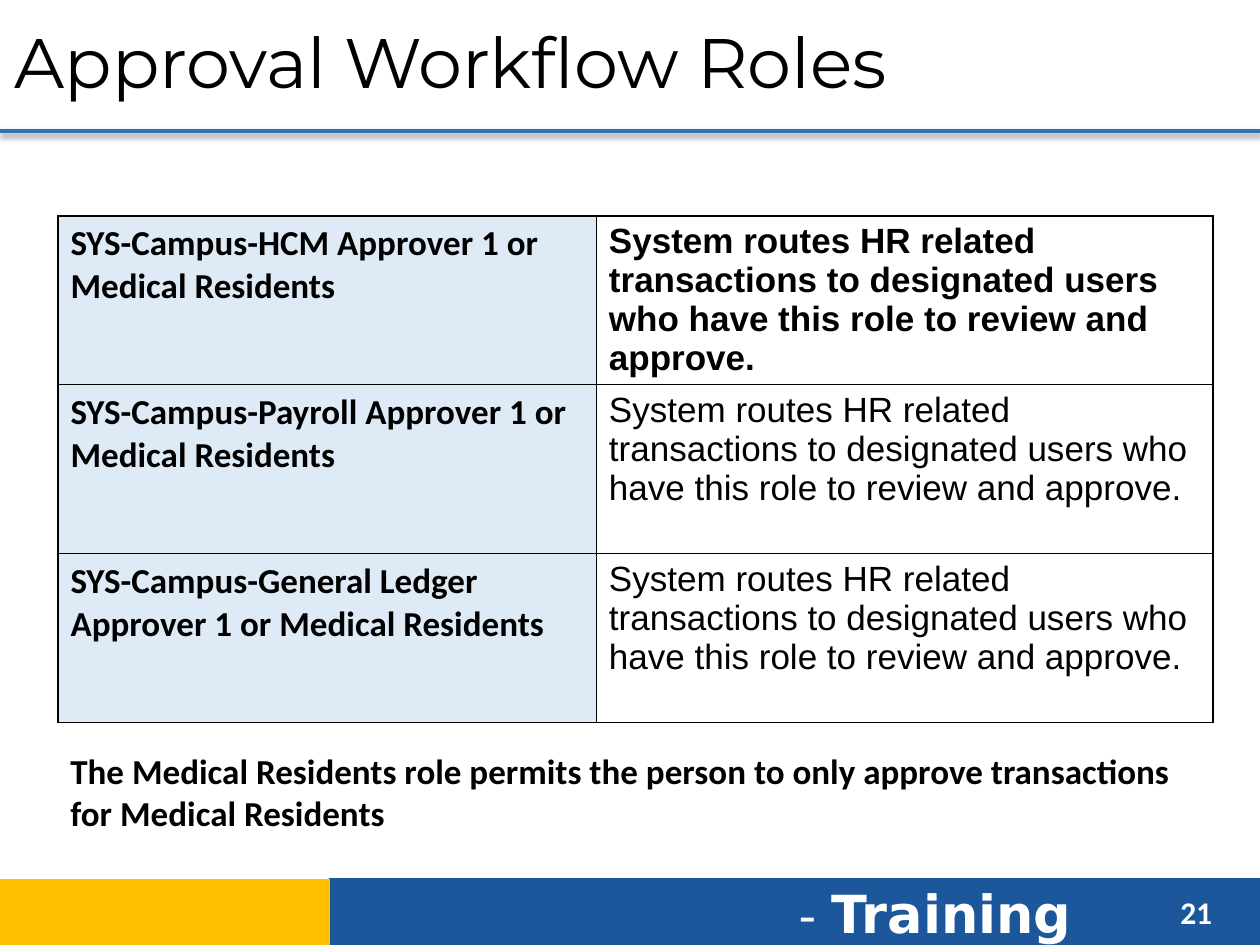
from dataclasses import dataclass

from lxml.etree import SubElement
from pptx import Presentation
from pptx.dml.color import RGBColor
from pptx.enum.shapes import MSO_CONNECTOR, MSO_SHAPE
from pptx.enum.text import MSO_ANCHOR
from pptx.oxml.ns import qn
from pptx.slide import Slide
from pptx.table import _Cell
from pptx.text.text import TextFrame
from pptx.util import Pt

COLORS = {
    "black": "000000",
    "white": "FFFFFF",
    "navy": "1D579B",
    "gold": "FFC000",
    "rule": "2E75B5",
    "role": "DEEBF7",
}


@dataclass(frozen=True)
class Box:
    left: float
    top: float
    width: float
    height: float

    def lengths(self) -> tuple[Pt, ...]:
        return tuple(Pt(v) for v in (self.left, self.top, self.width, self.height))


@dataclass(frozen=True)
class Words:
    text: str
    size: float = 20
    font: str = "Calibri"
    bold: bool = True
    color: str = "black"


@dataclass(frozen=True)
class Label:
    box: Box
    runs: tuple[Words, ...]
    anchor: MSO_ANCHOR = MSO_ANCHOR.TOP


@dataclass(frozen=True)
class Role:
    name: str
    bold_duty: bool = False


BANDS = (
    (Box(188, 501.8, 532, 39.6), "navy"),
    (Box(-0.7, 502.4, 189.3, 39.6), "gold"),
)
LABELS = (
    Label(Box(449.3, 499.7, 201.6, 43.9),
          (Words("- ", 28, "DejaVu Sans", False, "white"),
           Words("Training", 30, "DejaVu Sans", True, "white"))),
    Label(Box(667.4, 506.9, 43.2, 28.8), (Words("21", 18, color="white"),)),
    Label(Box(1.4, 10.1, 640, 49),
          (Words("Approval Workflow Roles", 40, "Montserrat", False),), MSO_ANCHOR.MIDDLE),
    Label(Box(33.1, 424.8, 653.8, 79.9),
          (Words("The Medical Residents role permits the person to only approve "
                 "transactions for Medical Residents"),)),
)
DUTY = ("System routes HR related transactions to designated users "
        "who have this role to review and approve.")
ROLES = (
    Role("SYS-Campus-HCM Approver 1 or Medical Residents", True),
    Role("SYS-Campus-Payroll Approver 1 or Medical Residents"),
    Role("SYS-Campus-General Ledger Approver 1 or Medical Residents"),
)
COLUMN_WIDTHS = (307.7, 352.5)
ROW_HEIGHT = 96.5


def rgb(name: str) -> RGBColor:
    return RGBColor.from_string(COLORS[name])


def write(frame: TextFrame, runs: tuple[Words, ...]) -> None:
    for words in runs:
        run = frame.paragraphs[0].add_run()
        run.text = words.text
        run.font.size = Pt(words.size)
        run.font.name = words.font
        run.font.bold = words.bold
        run.font.color.rgb = rgb(words.color)


def add_label(slide: Slide, label: Label) -> None:
    frame = slide.shapes.add_textbox(*label.box.lengths()).text_frame
    frame.word_wrap = True
    frame.vertical_anchor = label.anchor
    write(frame, label.runs)


def add_band(slide: Slide, box: Box, color: str) -> None:
    band = slide.shapes.add_shape(MSO_SHAPE.RECTANGLE, *box.lengths())
    band.shadow.inherit = False
    band.fill.solid()
    band.fill.fore_color.rgb = rgb(color)
    band.line.fill.background()


def add_title_rule(slide: Slide) -> None:
    rule = slide.shapes.add_connector(MSO_CONNECTOR.STRAIGHT, Pt(0), Pt(74.9), Pt(720), Pt(74.9))
    rule.line.color.rgb = rgb("rule")
    rule.line.width = Pt(2.25)
    effects = SubElement(rule._element.spPr, qn("a:effectLst"))
    shadow = SubElement(effects, qn("a:outerShdw"), blurRad=str(Pt(3.1)), dist=str(Pt(1.6)),
                        dir="5400000", rotWithShape="0")
    tint = SubElement(shadow, qn("a:srgbClr"), val=COLORS["black"])
    SubElement(tint, qn("a:alpha"), val="38000")


def fill_cell(cell: _Cell, words: Words, background: str) -> None:
    write(cell.text_frame, (words,))
    properties = cell._tc.get_or_add_tcPr()
    for side in ("lnL", "lnR", "lnT", "lnB"):
        border = SubElement(properties, qn(f"a:{side}"), w=str(Pt(1)))
        ink = SubElement(border, qn("a:solidFill"))
        SubElement(ink, qn("a:srgbClr"), val=COLORS["black"])
    cell.fill.solid()
    cell.fill.fore_color.rgb = rgb(background)


def add_roles(slide: Slide) -> None:
    box = Box(33.1, 123.3, sum(COLUMN_WIDTHS), ROW_HEIGHT * len(ROLES))
    table = slide.shapes.add_table(len(ROLES), len(COLUMN_WIDTHS), *box.lengths()).table
    table.first_row = table.horz_banding = False
    for column, width in zip(table.columns, COLUMN_WIDTHS):
        column.width = Pt(width)
    for index, role in enumerate(ROLES):
        table.rows[index].height = Pt(ROW_HEIGHT)
        fill_cell(table.cell(index, 0), Words(role.name), "role")
        fill_cell(table.cell(index, 1), Words(DUTY, font="Arial", bold=role.bold_duty), "white")


def main() -> None:
    """Build the approval workflow roles slide."""
    deck = Presentation()
    deck.slide_width, deck.slide_height = Pt(720), Pt(540)
    slide = deck.slides.add_slide(deck.slide_layouts[6])
    for box, color in BANDS:
        add_band(slide, box, color)
    add_title_rule(slide)
    add_roles(slide)
    for label in LABELS:
        add_label(slide, label)
    deck.save("out.pptx")


if __name__ == "__main__":
    main()
